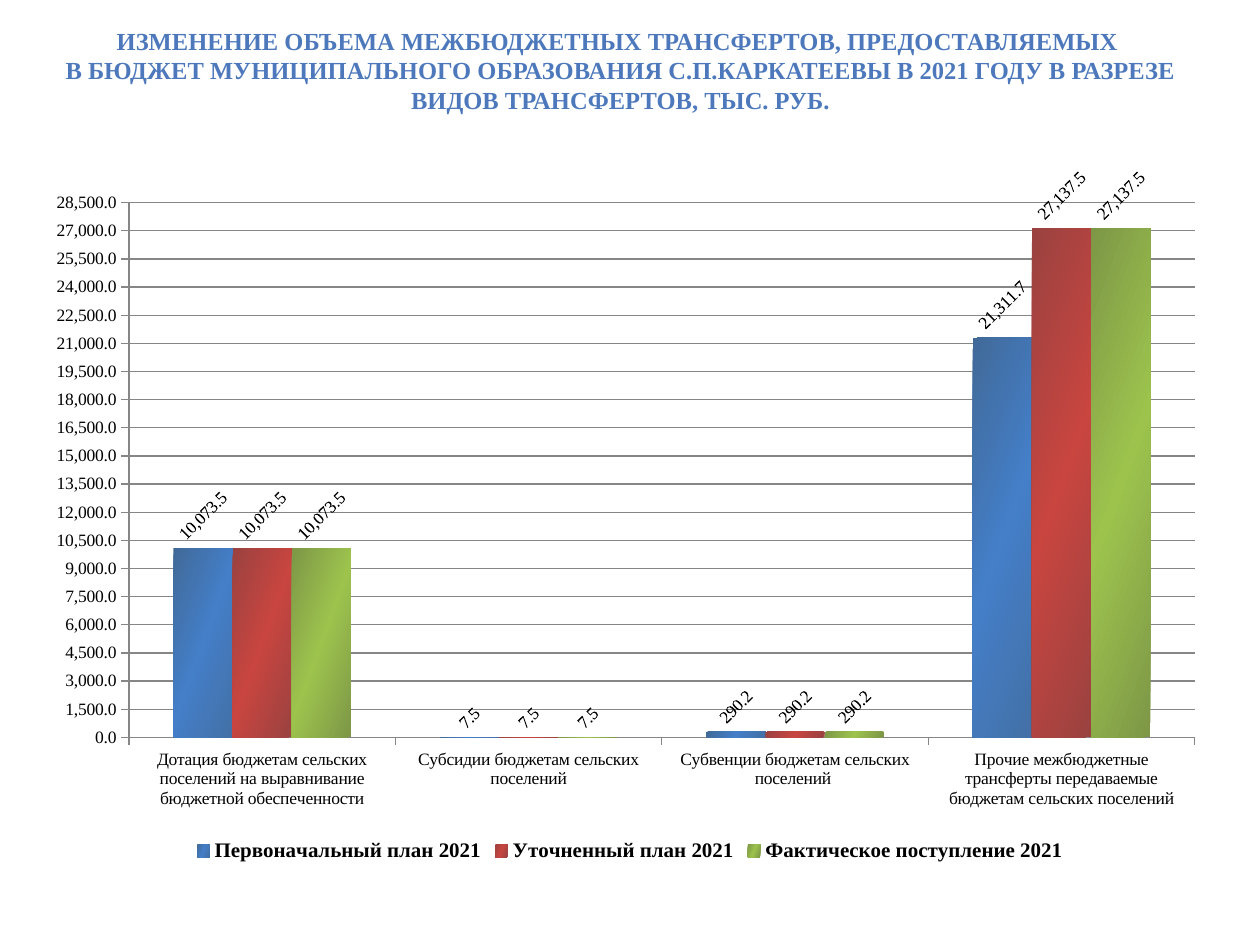
from lxml import etree
from pptx import Presentation
from pptx import util as u
from pptx.chart.data import CategoryChartData
from pptx.dml.color import RGBColor
from pptx.enum import chart as charts, text
from pptx.oxml import parse_xml
from pptx.oxml.ns import nsdecls, qn

FONT = "Times New Roman"
NUMBER_FORMAT = "#,##0.0"
TITLE_BLUE = RGBColor(0x4D, 0x79, 0xBC)
BLACK = RGBColor(0, 0, 0)
GRID_GRAY = RGBColor(0x86, 0x86, 0x86)

TITLE_LINES = [
    "ИЗМЕНЕНИЕ ОБЪЕМА МЕЖБЮДЖЕТНЫХ ТРАНСФЕРТОВ, ПРЕДОСТАВЛЯЕМЫХ ",
    "В БЮДЖЕТ МУНИЦИПАЛЬНОГО ОБРАЗОВАНИЯ С.П.КАРКАТЕЕВЫ В 2021 ГОДУ "
    "В РАЗРЕЗЕ ВИДОВ ТРАНСФЕРТОВ, ТЫС. РУБ.",
]
CATEGORIES = [
    "Дотация бюджетам сельских поселений на выравнивание бюджетной обеспеченности",
    "Субсидии бюджетам сельских поселений",
    "Субвенции бюджетам сельских поселений ",
    "Прочие межбюджетные трансферты передаваемые бюджетам сельских поселений",
]
SERIES = [
    ("Первоначальный план 2021", [10073.5, 7.5, 290.2, 21311.7],
     [RGBColor(0x41, 0x69, 0x98), RGBColor(0x44, 0x7F, 0xC8), RGBColor(0x43, 0x70, 0xA6)]),
    ("Уточненный план 2021", [10073.5, 7.5, 290.2, 27137.5],
     [RGBColor(0x9A, 0x42, 0x40), RGBColor(0xC8, 0x45, 0x40), RGBColor(0x9A, 0x42, 0x40)]),
    ("Фактическое поступление 2021", [10073.5, 7.5, 290.2, 27137.5],
     [RGBColor(0x7D, 0x97, 0x47), RGBColor(0x9D, 0xC3, 0x4D), RGBColor(0x7D, 0x97, 0x47)]),
]


def add_title(slide, left, top, width, height):
    """Add the centred slide heading to the given box."""
    frame = slide.shapes.add_textbox(left, top, width, height).text_frame
    frame.word_wrap = True
    frame.vertical_anchor = text.MSO_ANCHOR.MIDDLE
    frame.margin_left = frame.margin_right = u.Inches(0.11)
    frame.margin_top = frame.margin_bottom = u.Inches(0.06)
    paragraph = frame.paragraphs[0]
    paragraph.alignment = text.PP_ALIGN.CENTER
    for index, line in enumerate(TITLE_LINES):
        if index:
            paragraph.add_line_break()
        run = paragraph.add_run()
        run.text = line
        run.font.name = FONT
        run.font.size = u.Pt(14)
        run.font.bold = True
        run.font.color.rgb = TITLE_BLUE


def set_font(font, size, bold=False):
    """Set the chart typeface at the given size."""
    font.name = FONT
    font.size = u.Pt(size)
    font.bold = bold
    font.color.rgb = BLACK


def set_plot_layout(chart, left, top, width, height):
    """Fix the inner plot area as fractions of the chart."""
    plot_area = chart._chartSpace.chart.plotArea
    for old in plot_area.findall(qn("c:layout")):
        plot_area.remove(old)
    layout = parse_xml(f"<c:layout {nsdecls('c')}><c:manualLayout/></c:layout>")
    settings = {"layoutTarget": "inner", "xMode": "edge", "yMode": "edge",
                "x": left, "y": top, "w": width, "h": height}
    for tag, value in settings.items():
        etree.SubElement(layout[0], qn(f"c:{tag}")).set("val", str(value))
    plot_area.insert(0, layout)


def fill_gradient(series, colors):
    """Fill a series with evenly spaced gradient colours."""
    step = 100000 // (len(colors) - 1)
    stops = "".join(
        f'<a:gs pos="{index * step}"><a:srgbClr val="{color}"/></a:gs>'
        for index, color in enumerate(colors))
    series.format.fill.gradient()
    properties = series._element.get_or_add_spPr()
    gradient = parse_xml(
        f'<a:gradFill {nsdecls("a")} rotWithShape="1"><a:gsLst>{stops}</a:gsLst>'
        '<a:lin ang="1200000" scaled="0"/></a:gradFill>')
    properties.replace(properties.find(qn("a:gradFill")), gradient)


def add_labels(series):
    """Show slanted values above the columns of a series."""
    labels = series.data_labels
    labels.show_value = True
    labels.number_format = NUMBER_FORMAT
    labels.number_format_is_linked = False
    labels.position = charts.XL_LABEL_POSITION.OUTSIDE_END
    set_font(labels.font, 10)
    body = labels._element.find(qn("c:txPr")).find(qn("a:bodyPr"))
    body.set("rot", "-2700000")
    body.set("vert", "horz")


def style_axes(chart):
    """Set the scale, gridlines and fonts of both axes."""
    values = chart.value_axis
    values.minimum_scale = 0
    values.maximum_scale = 28500
    values.major_unit = 1500
    values.has_major_gridlines = True
    values.major_gridlines.format.line.color.rgb = GRID_GRAY
    values.tick_labels.number_format = NUMBER_FORMAT
    values.tick_labels.number_format_is_linked = False
    for axis in (values, chart.category_axis):
        axis.major_tick_mark = charts.XL_TICK_MARK.OUTSIDE
        axis.format.line.color.rgb = GRID_GRAY
        set_font(axis.tick_labels.font, 10)


def add_transfers_chart(slide, left, top, width, height):
    """Add the clustered columns of transfers to the given box."""
    data = CategoryChartData(number_format=NUMBER_FORMAT)
    data.categories = CATEGORIES
    for name, values, _ in SERIES:
        data.add_series(name, values)
    chart = slide.shapes.add_chart(
        charts.XL_CHART_TYPE.COLUMN_CLUSTERED, left, top, width, height, data).chart
    set_font(chart.font, 10)
    chart.has_title = False
    chart.has_legend = True
    chart.legend.position = charts.XL_LEGEND_POSITION.BOTTOM
    chart.legend.include_in_layout = False
    set_font(chart.legend.font, 12, bold=True)
    set_plot_layout(chart, 0.076, 0.04, 0.902, 0.773)
    style_axes(chart)
    plot = chart.plots[0]
    plot.gap_width = 150
    plot.overlap = 0
    plot.vary_by_categories = False
    for series, (_, _, colors) in zip(plot.series, SERIES):
        fill_gradient(series, colors)
        add_labels(series)


def main():
    """Build and save the slide."""
    presentation = Presentation()
    presentation.slide_width = u.Inches(10)
    presentation.slide_height = u.Inches(7.5)
    slide = presentation.slides.add_slide(presentation.slide_layouts[6])
    add_title(slide, u.Inches(0.12), u.Inches(0.13), u.Inches(9.61), u.Inches(0.85))
    add_transfers_chart(slide, u.Inches(0.31), u.Inches(1.33), u.Inches(9.38), u.Inches(5.55))
    presentation.save("out.pptx")


if __name__ == "__main__":
    main()
